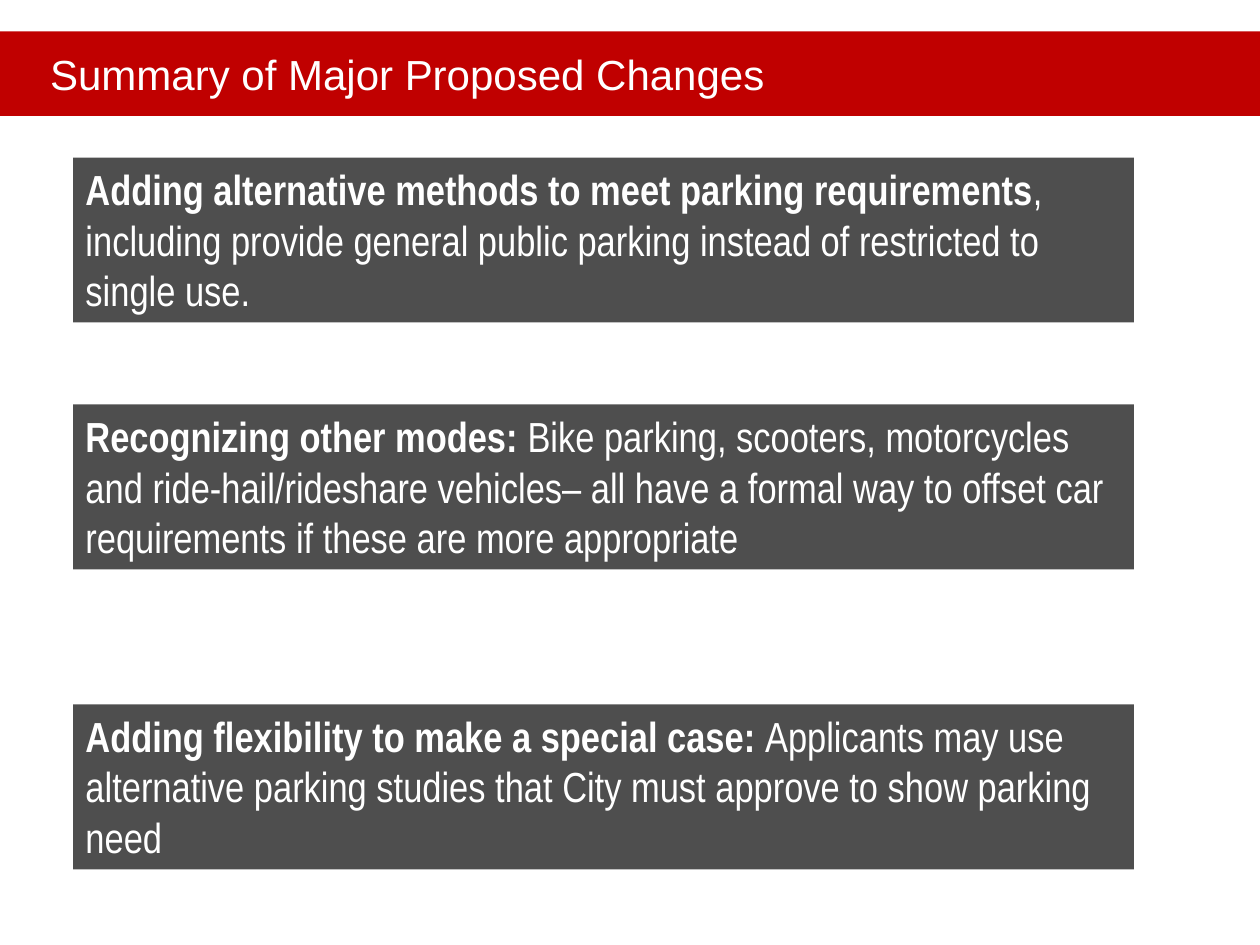
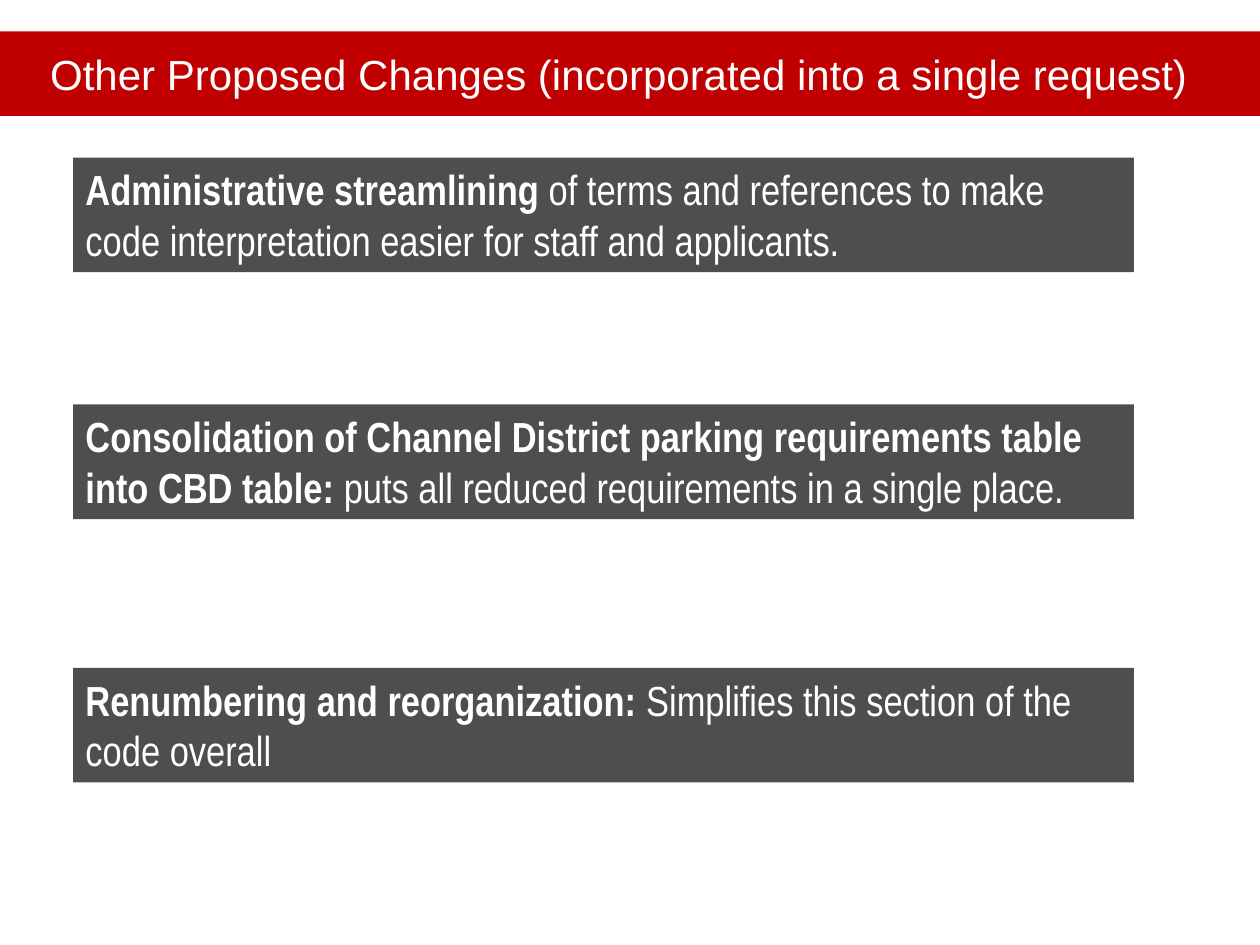
from lxml import etree
from pptx import Presentation
from pptx.dml.color import RGBColor
from pptx.enum.shapes import MSO_SHAPE
from pptx.enum.text import MSO_ANCHOR, MSO_AUTO_SIZE, PP_ALIGN
from pptx.oxml.ns import qn
from pptx.util import Inches, Pt

RED, DARK, WHITE = "C00000", "222222", "FFFFFF"
TITLE_FONT = {"name": "Arial", "size": Pt(24), "bold": False}
LEAD_FONT = {"name": "Arial Narrow", "size": Pt(24), "bold": True}
BODY_FONT = {**LEAD_FONT, "bold": False}


def rgb(color):
    return RGBColor.from_string(color)


def add_box(s, x, y, w, h, fill, anchor, runs):
    """Add a filled rectangle with one left-aligned paragraph of (text, format) runs."""
    sp = s.shapes.add_shape(MSO_SHAPE.RECTANGLE, Inches(x), Inches(y), Inches(w), Inches(h))
    sp.shadow.inherit = False
    sp.fill.solid()
    sp.fill.fore_color.rgb = rgb(fill)
    sp.line.fill.background()
    tf = sp.text_frame
    tf.word_wrap = True
    tf.vertical_anchor = anchor
    p = tf.paragraphs[0]
    p.alignment = PP_ALIGN.LEFT
    for text, fmt in runs:
        r = p.add_run()
        r.text = text
        for key, value in fmt.items():
            setattr(r.font, key, value)
        r.font.color.rgb = rgb(WHITE)
    return sp


# Slide content: title, box height, then (top, bold lead, remaining text)
slides = [
    ("Summary of Major Proposed Changes", 1.31, [
        (1.25, "Adding alternative methods to meet parking requirements",
         ", including provide general public parking instead of restricted to single use."),
        (3.21, "Recognizing other modes: ",
         "Bike parking, scooters, motorcycles and ride-hail/rideshare vehicles– all have "
         "a formal way to offset car requirements if these are more appropriate"),
        (5.59, "Adding flexibility to make a special case: ",
         "Applicants may use alternative parking studies that City must approve to show "
         "parking need"),
    ]),
    ("Other Proposed Changes (incorporated into a single request)", 0.91, [
        (1.25, "Administrative streamlining",
         " of terms and references to make code interpretation easier for staff and applicants."),
        (3.21, "Consolidation of Channel District parking requirements table into CBD table: ",
         "puts all reduced requirements in a single place."),
        (5.3, "Renumbering and reorganization: ",
         "Simplifies this section of the code overall"),
    ]),
]

prs = Presentation()
prs.slide_width, prs.slide_height = Inches(10), Inches(7.5)

for title, height, changes in slides:
    s = prs.slides.add_slide(prs.slide_layouts[6])

    # Title band
    band = add_box(s, 0, 0.25, 10, 0.67, RED, MSO_ANCHOR.MIDDLE, [(title, TITLE_FONT)])
    pPr = band.text_frame.paragraphs[0]._p.get_or_add_pPr()
    pPr.set("marL", str(Inches(0.3)))

    # Translucent boxes, one per change
    for top, lead, rest in changes:
        sp = add_box(s, 0.58, top, 8.42, height, DARK, MSO_ANCHOR.TOP,
                     [(lead, LEAD_FONT), (rest, BODY_FONT)])
        sp.text_frame.auto_size = MSO_AUTO_SIZE.SHAPE_TO_FIT_TEXT
        color = sp._element.spPr.find(qn("a:solidFill")).find(qn("a:srgbClr"))
        etree.SubElement(color, qn("a:alpha"), val="80000")

prs.save("out.pptx")
